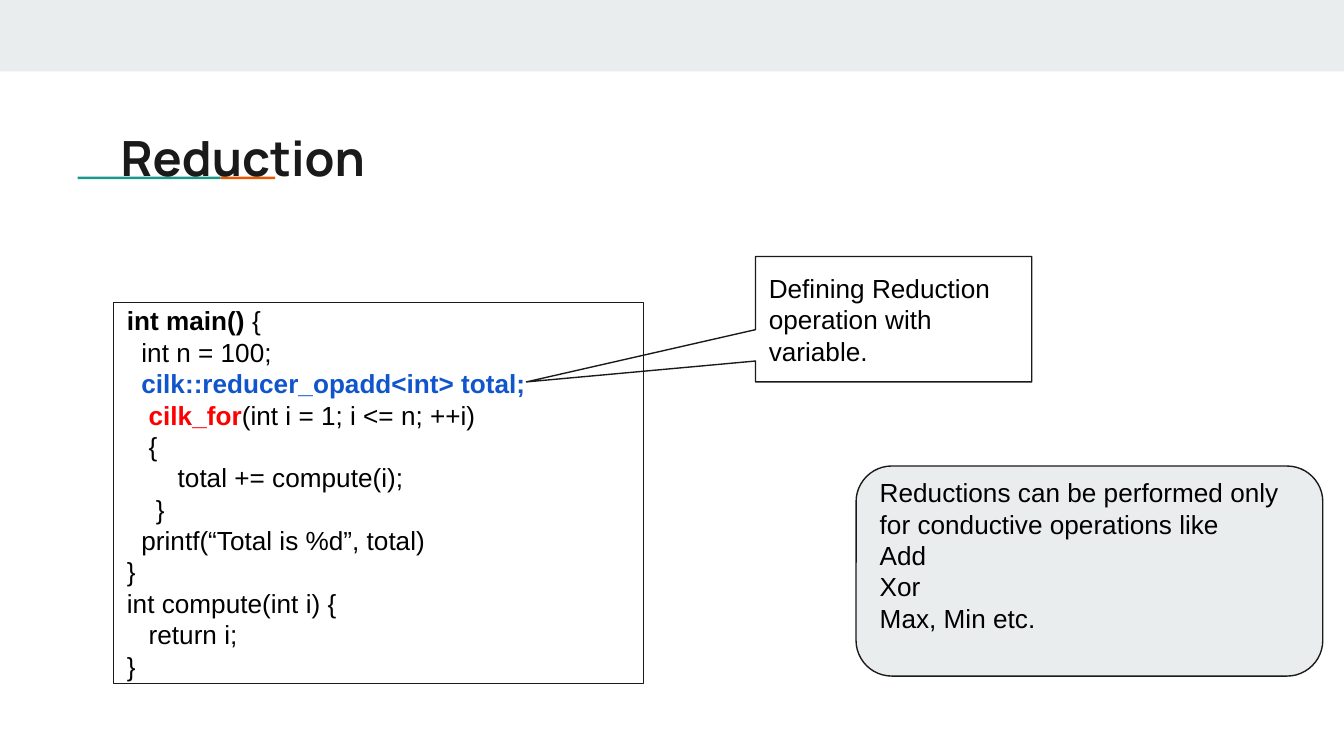
from pptx import Presentation
from pptx.dml.color import RGBColor
from pptx.enum.shapes import MSO_SHAPE as Shape
from pptx.enum.text import MSO_ANCHOR as Anchor, MSO_AUTO_SIZE as AutoSize, PP_ALIGN as Align
from pptx.util import Cm, Pt

INK, BLACK, PALE = "1A1A1A", "000000", "E9EDEE"
BLUE, RED, TEAL, ORANGE = "1155CC", "FF0000", "1A9988", "EB5600"
SPACE_WIDTH = 0.137
INSET = 0.25

TITLE = "Reduction"
CODE = [
    (0, [("int main()", BLACK, True), (" {", BLACK, False)]),
    (2, [("int n = 100;", BLACK, False)]),
    (2, [("cilk::reducer_opadd<int> total;", BLUE, True)]),
    (3, [("cilk_for", RED, True), ("(int i = 1; i <= n; ++i)", BLACK, False)]),
    (3, [("{", BLACK, False)]),
    (7, [("total += compute(i);", BLACK, False)]),
    (4, [("}", BLACK, False)]),
    (2, [("printf(“Total is %d”, total)", BLACK, False)]),
    (0, [("}", BLACK, False)]),
    (0, [("int compute(int i) {", BLACK, False)]),
    (3, [("return i;", BLACK, False)]),
    (0, [("}", BLACK, False)]),
]
CALLOUT = ["Defining Reduction operation with variable."]
NOTE = [
    "Reductions can be performed only for conductive operations like",
    "Add",
    "Xor",
    "Max, Min etc.",
]
BANDS = [
    (0, 0, 25.4, 1.35, PALE),
    (1.47, 3.34, 2.7, 0.05, TEAL),
    (4.17, 3.34, 1.03, 0.05, ORANGE),
]


def color(hex_code):
    return RGBColor.from_string(hex_code)


def plain(lines):
    return [(0, [(line, BLACK, False)]) for line in lines]


def add_run(paragraph, text, size, font, ink, bold):
    run = paragraph.add_run()
    run.text = text
    run.font.size, run.font.name, run.font.bold = Pt(size), font, bold
    run.font.color.rgb = color(ink)


def set_frame(frame, anchor, bottom=INSET):
    frame.word_wrap = True
    frame.auto_size = AutoSize.NONE
    frame.vertical_anchor = anchor
    frame.margin_left = frame.margin_right = frame.margin_top = Cm(INSET)
    frame.margin_bottom = Cm(bottom)


def add_box(slide, kind, box, fill=None, line=None, adjustments=()):
    shape = slide.shapes.add_shape(kind, *map(Cm, box))
    shape.shadow.inherit = False
    for index, value in enumerate(adjustments):
        shape.adjustments[index] = value
    if fill:
        shape.fill.solid()
        shape.fill.fore_color.rgb = color(fill)
    else:
        shape.fill.background()
    if line:
        shape.line.color.rgb = color(line)
        shape.line.width = Pt(0.75)
    else:
        shape.line.fill.background()
    return shape


def write_lines(shape, lines, bottom=INSET):
    frame = shape.text_frame
    set_frame(frame, Anchor.MIDDLE, bottom)
    for index, (spaces, runs) in enumerate(lines):
        paragraph = frame.add_paragraph() if index else frame.paragraphs[0]
        paragraph.alignment = Align.LEFT
        if spaces:
            paragraph._p.get_or_add_pPr().set("marL", str(Cm(spaces * SPACE_WIDTH)))
        for text, ink, bold in runs:
            add_run(paragraph, text, 14, "Arial", ink, bold)


def add_title(slide):
    title = slide.shapes.title
    title.left, title.top, title.width, title.height = map(Cm, (2.03, 2.16, 21.36, 1.5))
    set_frame(title.text_frame, Anchor.TOP)
    heading = title.text_frame.paragraphs[0]
    heading.alignment = Align.LEFT
    add_run(heading, TITLE, 26, "Manrope", INK, True)
    slide.shapes._spTree.append(title._element)


def main():
    """Build the slide about reduction in Cilk."""
    deck = Presentation()
    deck.slide_width, deck.slide_height = Cm(25.4), Cm(14.29)
    slide = deck.slides.add_slide(deck.slide_layouts[5])
    for *box, fill in BANDS:
        add_box(slide, Shape.RECTANGLE, box, fill)
    add_title(slide)
    code = add_box(slide, Shape.RECTANGLE, (2.15, 5.72, 10.01, 7.2), line=INK)
    write_lines(code, CODE)
    callout = add_box(slide, Shape.ROUNDED_RECTANGULAR_CALLOUT, (14.28, 4.85, 5.22, 2.37),
                      line=INK, adjustments=(-1.33, 0.5, 0))
    write_lines(callout, plain(CALLOUT))
    note = add_box(slide, Shape.ROUNDED_RECTANGLE, (16.18, 8.81, 8.82, 3.97),
                   PALE, INK, (0.17,))
    write_lines(note, plain(NOTE), bottom=0.85)
    deck.save("out.pptx")


if __name__ == "__main__":
    main()
